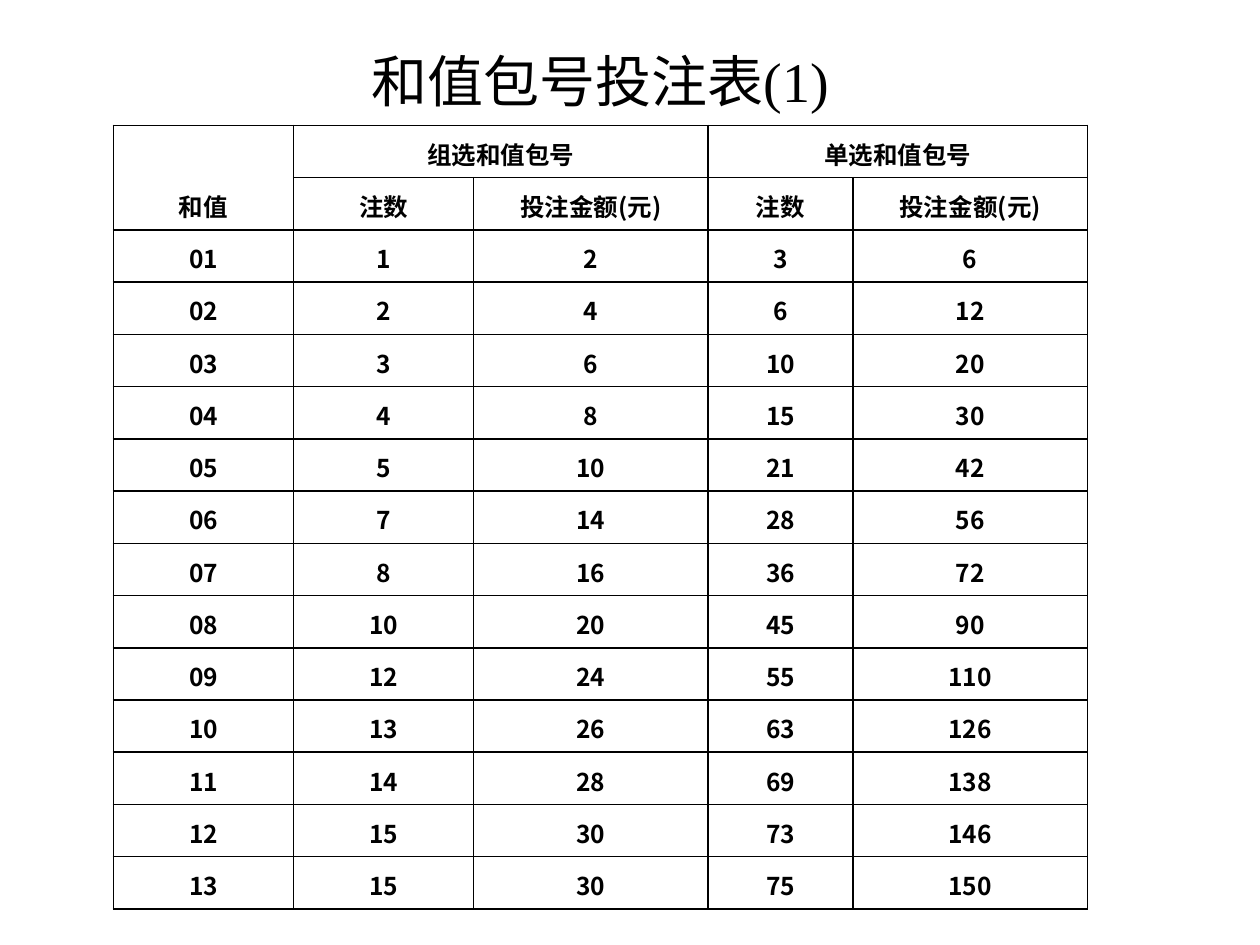
"""Build a slide with a betting table of sums, bet counts and amounts."""
import lxml.etree
import pptx
import pptx.dml.color
import pptx.enum.text
import pptx.oxml.ns
import pptx.util

TITLE = "和值包号投注表(1)"
GROUPS = ["和值", "组选和值包号", "", "单选和值包号", ""]
HEADS = ["", "注数", "投注金额(元)", "注数", "投注金额(元)"]
BETS = [
    (1, 3), (2, 6), (3, 10), (4, 15), (5, 21), (7, 28), (8, 36),
    (10, 45), (12, 55), (13, 63), (14, 69), (15, 73), (15, 75),
]
PRICE = 2
MERGES = [((0, 0), (0, 4)), ((1, 0), (2, 0)), ((1, 1), (1, 2)), ((1, 3), (1, 4))]

BLACK = pptx.dml.color.RGBColor(0, 0, 0)
HEAD_FONT = {"name": "Times New Roman", "size": pptx.util.Pt(32), "bold": False}
BODY_FONT = {"name": "Noto Sans CJK SC", "size": pptx.util.Pt(14), "bold": True}

WIDE, HIGH = 10, 7.5
LEFT, TOP, TALL = 0.9, 0.25, 6.85
COLS = [1.43, 1.43, 1.86, 1.15, 1.86]
HEAD_ROW = 0.63


def add_line(cell, side, shown):
    """Draw or hide one border of a cell."""
    props = cell._tc.get_or_add_tcPr()
    line = lxml.etree.SubElement(props, pptx.oxml.ns.qn(f"a:ln{side}"), w=str(pptx.util.Pt(1)))
    if shown:
        fill = lxml.etree.SubElement(line, pptx.oxml.ns.qn("a:solidFill"))
        lxml.etree.SubElement(fill, pptx.oxml.ns.qn("a:srgbClr"), val=str(BLACK))
    else:
        lxml.etree.SubElement(line, pptx.oxml.ns.qn("a:noFill"))


def set_text(cell, text, style):
    """Write centred text in a cell with the given font values."""
    para = cell.text_frame.paragraphs[0]
    para.alignment = pptx.enum.text.PP_ALIGN.CENTER
    run = para.add_run()
    run.text = text
    for key, value in style.items():
        setattr(run.font, key, value)
    run.font.color.rgb = BLACK
    if style is BODY_FONT:
        props = run._r.get_or_add_rPr()
        lxml.etree.SubElement(props, pptx.oxml.ns.qn("a:ea"), typeface=style["name"])


def main():
    """Lay out the table and save the deck."""
    deck = pptx.Presentation()
    deck.slide_width = pptx.util.Inches(WIDE)
    deck.slide_height = pptx.util.Inches(HIGH)
    slide = deck.slides.add_slide(deck.slide_layouts[6])

    rows = [[TITLE, "", "", "", ""], GROUPS, HEADS]
    for total, (group, single) in enumerate(BETS, 1):
        rows.append([f"{total:02}", group, group * PRICE, single, single * PRICE])

    box = [pptx.util.Inches(size) for size in (LEFT, TOP, sum(COLS), TALL)]
    table = slide.shapes.add_table(len(rows), len(COLS), *box).table
    table.first_row = table.horz_banding = False
    for col, width in zip(table.columns, COLS):
        col.width = pptx.util.Inches(width)
    step = (TALL - HEAD_ROW) / (len(rows) - 1)
    for num, row in enumerate(table.rows):
        row.height = pptx.util.Inches(step if num else HEAD_ROW)

    for num, row in enumerate(rows):
        for col, text in enumerate(row):
            cell = table.cell(num, col)
            cell.vertical_anchor = pptx.enum.text.MSO_ANCHOR.BOTTOM
            for side in "LRTB":
                add_line(cell, side, num > 0 or side == "B")
            cell.fill.background()
            if text != "":
                set_text(cell, str(text), BODY_FONT if num else HEAD_FONT)
    for start, end in MERGES:
        table.cell(*start).merge(table.cell(*end))

    deck.save("out.pptx")


if __name__ == "__main__":
    main()
